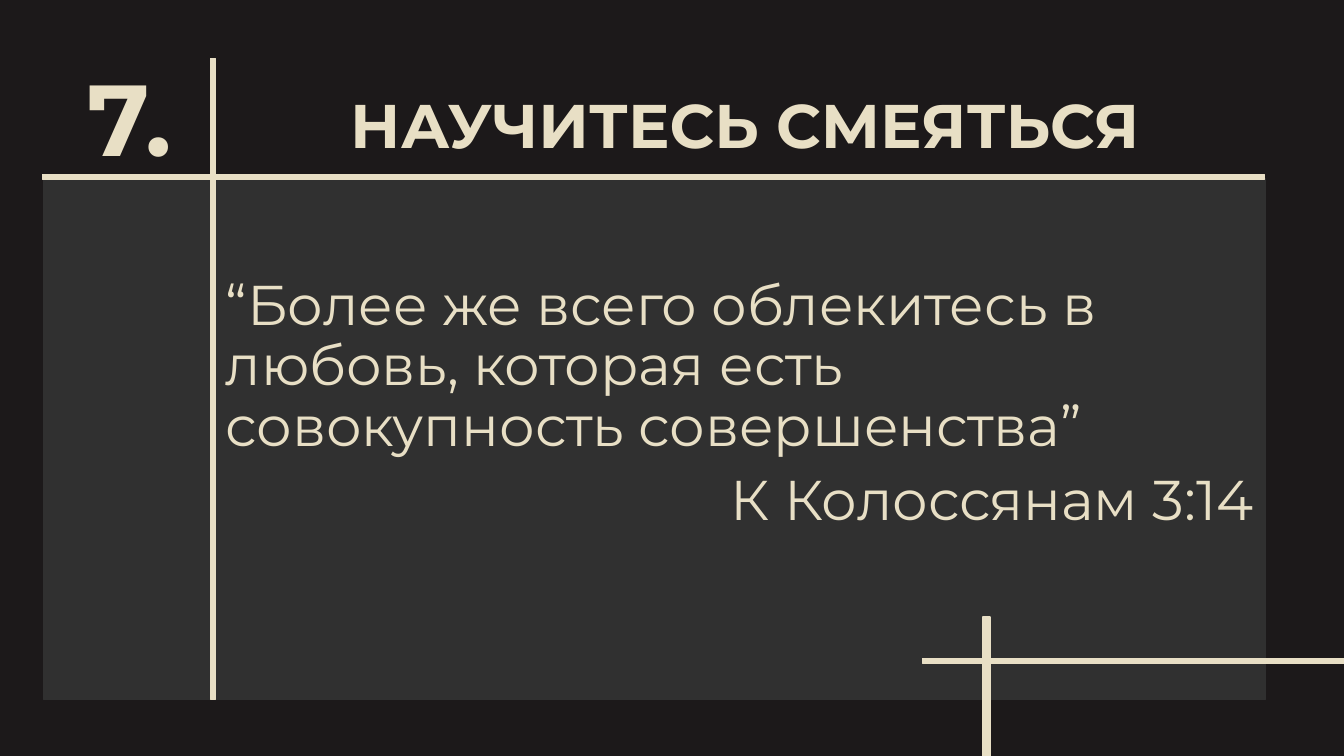
import pptx
import pptx.util
import pptx.dml.color
import pptx.enum.shapes
import pptx.enum.text

Inches = pptx.util.Inches
Pt = pptx.util.Pt
ALIGN = pptx.enum.text.PP_ALIGN
ANCHOR = pptx.enum.text.MSO_ANCHOR

COLORS = {"background": "1C191A", "panel": "303030", "cream": "E8DFC5"}
BAR = 0.05


def rgb(name):
    return pptx.dml.color.RGBColor.from_string(COLORS[name])


class QuoteSlide:
    font_name = "Montserrat"
    line_spacing = 0.9

    def __init__(self, presentation):
        self.slide = presentation.slides.add_slide(presentation.slide_layouts[6])
        background = self.slide.background.fill
        background.solid()
        background.fore_color.rgb = rgb("background")

    def rectangle(self, left, top, width, height, color):
        shape = self.slide.shapes.add_shape(
            pptx.enum.shapes.MSO_SHAPE.RECTANGLE,
            Inches(left), Inches(top), Inches(width), Inches(height))
        shape.shadow.inherit = False
        shape.fill.solid()
        shape.fill.fore_color.rgb = rgb(color)
        shape.line.color.rgb = rgb(color)
        shape.line.width = Pt(1)

    def text(self, left, top, width, height, lines, size, bold=False, anchor=ANCHOR.MIDDLE):
        """Add a text box; lines holds (text, alignment, points before) tuples."""
        box = self.slide.shapes.add_textbox(
            Inches(left), Inches(top), Inches(width), Inches(height))
        frame = box.text_frame
        frame.word_wrap = True
        frame.vertical_anchor = anchor
        for index, (words, alignment, before) in enumerate(lines):
            paragraph = frame.add_paragraph() if index else frame.paragraphs[0]
            paragraph_format = {"alignment": alignment, "space_before": Pt(before),
                                "line_spacing": self.line_spacing}
            for name, value in paragraph_format.items():
                setattr(paragraph, name, value)
            run = paragraph.add_run()
            run.text = words
            font_format = {"name": self.font_name, "size": Pt(size), "bold": bold}
            for name, value in font_format.items():
                setattr(run.font, name, value)
            run.font.color.rgb = rgb("cream")


def main():
    presentation = pptx.Presentation()
    presentation.slide_width = Inches(13.33)
    presentation.slide_height = Inches(7.5)
    page = QuoteSlide(presentation)

    page.rectangle(0.43, 1.77, 12.12, 5.17, "panel")
    page.text(2.14, 2.7, 10.39, 3.79, [
        ("“Более же всего облекитесь в любовь, которая есть совокупность совершенства”",
         ALIGN.LEFT, 0),
        ("К Колоссянам 3:14", ALIGN.RIGHT, 10),
    ], 40, anchor=ANCHOR.TOP)
    page.text(2.24, 0.55, 10.3, 1.45, [("НАУЧИТЕСЬ СМЕЯТЬСЯ", ALIGN.CENTER, 0)], 44, bold=True)

    bars = [
        (2.09, 0.58, BAR, 6.36),
        (0.42, 1.73, 12.12, BAR),
        (9.75, 6.12, 0.07, 1.38),
        (9.15, 6.53, 4.18, BAR),
    ]
    for bar in bars:
        page.rectangle(*bar, "cream")

    page.text(0.45, 0.6, 1.67, 1.26, [("7.", ALIGN.CENTER, 0)], 72, bold=True)
    presentation.save("out.pptx")


if __name__ == "__main__":
    main()
